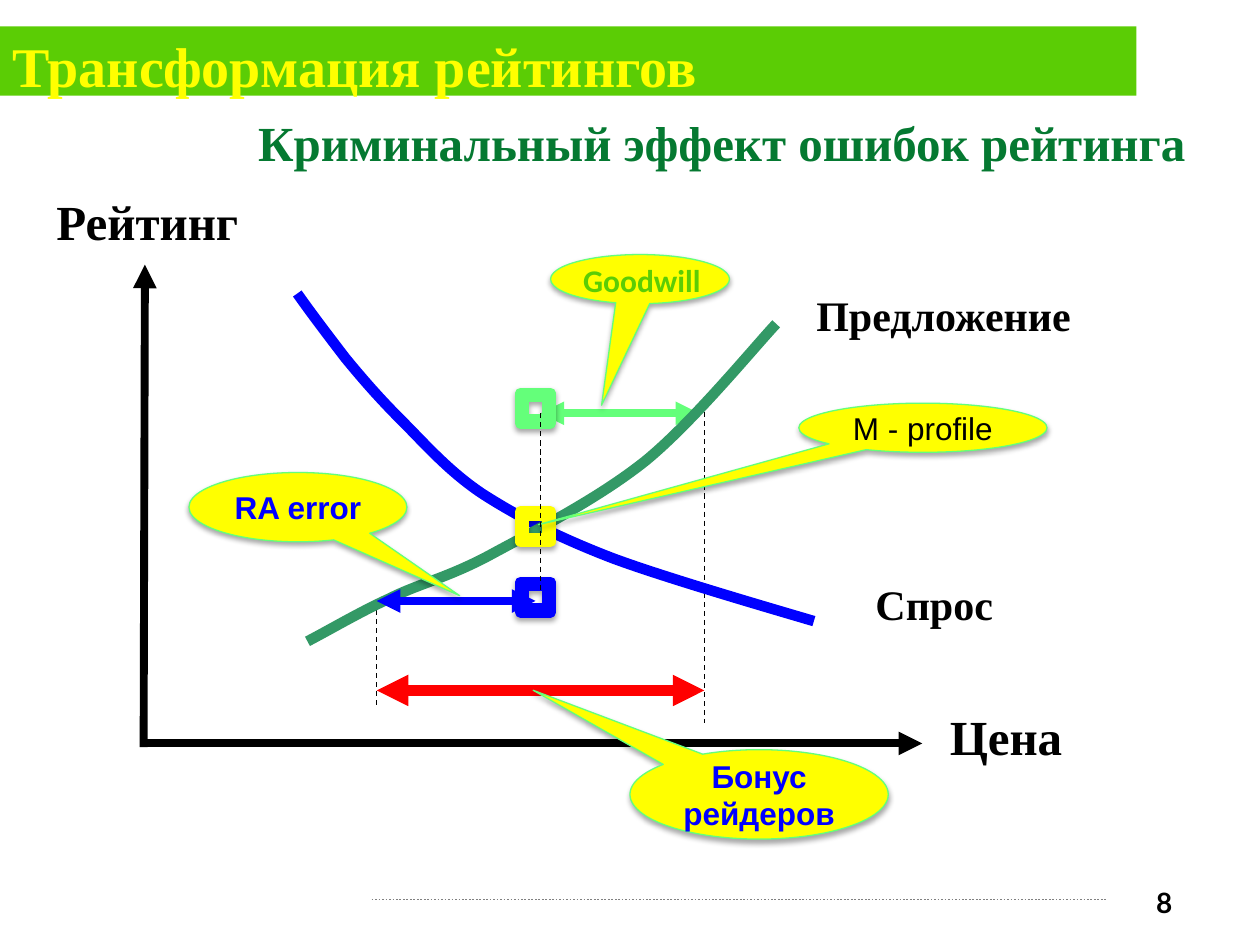
from lxml import etree
from pptx import Presentation
from pptx.dml.color import RGBColor
from pptx.enum.dml import MSO_LINE
from pptx.enum.shapes import MSO_CONNECTOR, MSO_SHAPE
from pptx.enum.text import MSO_ANCHOR, PP_ALIGN
from pptx.oxml.ns import qn
from pptx.util import Inches, Pt

STRAIGHT = MSO_CONNECTOR.STRAIGHT
RECTANGLE, FRAME, CALLOUT = MSO_SHAPE.RECTANGLE, MSO_SHAPE.FRAME, MSO_SHAPE.OVAL_CALLOUT
DASH, DOTS = MSO_LINE.DASH, MSO_LINE.ROUND_DOT
LEFT, CENTER = PP_ALIGN.LEFT, PP_ALIGN.CENTER
TOP, MIDDLE = MSO_ANCHOR.TOP, MSO_ANCHOR.MIDDLE

BLACK = RGBColor(0x00, 0x00, 0x00)
GRAY = RGBColor(0x80, 0x80, 0x80)
RED = RGBColor(0xFF, 0x00, 0x00)
BLUE = RGBColor(0x00, 0x00, 0xFF)
YELLOW = RGBColor(0xFF, 0xFF, 0x00)
BAR_GREEN = RGBColor(0x5B, 0xCD, 0x05)
MINT = RGBColor(0x64, 0xFF, 0x7A)
LIME = RGBColor(0x45, 0xFF, 0x2C)
SUPPLY_GREEN = RGBColor(0x33, 0x99, 0x66)
HEADING_GREEN = RGBColor(0x05, 0x79, 0x31)

SERIF = "Times New Roman"
ERROR_X, BALANCE_X, SUPPLY_X = 2.99, 4.29, 5.59
GOODWILL_Y, ERROR_Y, BONUS_Y = 3.28, 4.77, 5.48
FRAME_LEFT, FRAME_SIZE = 4.13, 0.24

BACK_LINES = [
    ((2.95, 7.14), (8.78, 7.14), GRAY, 1, DOTS, ()),
    ((1.14, 5.93), (1.15, 2.1), BLACK, 4.5, None, ("tailEnd",)),
    ((1.15, 5.9), (7.32, 5.9), BLACK, 4.5, None, ("tailEnd",)),
    ((ERROR_X, BONUS_Y), (SUPPLY_X, BONUS_Y), RED, 6, None, ("headEnd", "tailEnd")),
    ((BALANCE_X, GOODWILL_Y), (5.55, GOODWILL_Y), MINT, 4.5, None, ("headEnd", "tailEnd")),
    ((ERROR_X, ERROR_Y), (ERROR_X, 5.62), BLACK, 0.75, DASH, ()),
    ((SUPPLY_X, 3.2), (SUPPLY_X, 5.74), BLACK, 0.75, DASH, ()),
]
ERROR_ARROW = ((ERROR_X, ERROR_Y), (4.25, ERROR_Y), BLUE, 4.5, None, ("headEnd", "tailEnd"))
BALANCE_LINE = ((BALANCE_X, GOODWILL_Y), (BALANCE_X, 4.69), BLACK, 0.75, DASH, ())

CURVES = [
    (BLUE, [(2.36, 2.33), (2.48, 2.5), (2.61, 2.67), (2.74, 2.84), (2.88, 3.01), (3.01, 3.16),
            (3.19, 3.34), (3.37, 3.52), (3.56, 3.74), (3.83, 3.92), (4.11, 4.1), (4.42, 4.26),
            (4.86, 4.43), (5.29, 4.59), (6.19, 4.85), (6.46, 4.93)]),
    (SUPPLY_GREEN, [(2.44, 5.09), (2.65, 4.98), (2.85, 4.86), (3.09, 4.75), (3.33, 4.63),
                    (3.54, 4.59), (3.88, 4.41), (4.21, 4.23), (4.73, 3.97), (5.12, 3.66),
                    (5.5, 3.35), (5.99, 2.75), (6.16, 2.57)]),
]
FRAMES = [(3.12, LIME, MINT), (4.62, LIME, BLUE), (4.06, YELLOW, YELLOW)]

CALLOUTS = [
    ((4.37, 2.02, 1.42, 0.39), (-0.215, 2.565), "", BLUE, True),
    ((1.5, 3.75, 1.73, 0.55), (0.742, 1.278), "RA error", BLUE, True),
    ((5, 5.95, 2.05, 0.71), (-0.875, -1.165), "Бонус рейдеров", BLUE, True),
    ((6.34, 3.2, 1.97, 0.39), (-1.549, 1.971), "M - profile", BLACK, False),
]
LABELS = [
    ((6.85, 4.54, 1.57, 0.51), "Спрос", SERIF, 24, BLACK, LEFT, TOP),
    ((6.38, 2.25, 2.25, 0.51), "Предложение", SERIF, 24, BLACK, LEFT, TOP),
    ((7.44, 5.56, 1.56, 0.57), "Цена", SERIF, 28, BLACK, LEFT, TOP),
    ((0.35, 1.47, 2.16, 0.57), "Рейтинг", SERIF, 28, BLACK, LEFT, TOP),
    ((4.53, 2.02, 1.14, 0.4), "Goodwill", "Calibri", 18, BAR_GREEN, LEFT, TOP),
    ((1.95, 0.84, 8.05, 0.47), "Криминальный эффект ошибок рейтинга",
     SERIF, 28, HEADING_GREEN, LEFT, TOP),
    ((0, 0.28, 8.05, 0.47), "Трансформация рейтингов", SERIF, 32, YELLOW, LEFT, MIDDLE),
    ((8.86, 6.98, 0.76, 0.28), "8", "Lato", 16, BLACK, CENTER, TOP),
]


def write(shape, text, color, align, anchor, **formats):
    shape.text_frame.vertical_anchor = anchor
    paragraph = shape.text_frame.paragraphs[0]
    paragraph.alignment = align
    run = paragraph.add_run()
    run.text = text
    run.font.color.rgb = color
    for name, value in formats.items():
        setattr(run.font, name, value)


def add_line(slide, start, end, color, width, dash, arrowheads):
    connector = slide.shapes.add_connector(STRAIGHT, *map(Inches, start + end))
    connector.line.color.rgb = color
    connector.line.width = Pt(width)
    if dash:
        connector.line.dash_style = dash
    for arrowhead in arrowheads:
        etree.SubElement(connector.line._get_or_add_ln(), qn("a:" + arrowhead), type="triangle")
    etree.SubElement(connector._element.spPr, qn("a:effectLst"))


def add_curve(slide, color, points):
    start, *targets = [(Inches(x), Inches(y)) for x, y in points]
    builder = slide.shapes.build_freeform(*start)
    builder.add_line_segments(targets, close=False)
    shape = builder.convert_to_shape()
    shape.shadow.inherit = False
    shape.fill.background()
    shape.line.color.rgb = color
    shape.line.width = Pt(6)
    outline = shape._element.spPr.find(".//" + qn("a:path"))
    segments = outline.findall(qn("a:lnTo"))
    for first in range(0, len(segments), 3):
        bezier = etree.SubElement(outline, qn("a:cubicBezTo"))
        for segment in segments[first:first + 3]:
            bezier.append(segment[0])
            outline.remove(segment)


def add_shape(slide, kind, box, fill, line=None, width=0.75):
    shape = slide.shapes.add_shape(kind, *map(Inches, box))
    shape.shadow.inherit = False
    shape.fill.solid()
    shape.fill.fore_color.rgb = fill
    if line is None:
        shape.line.fill.background()
        return shape
    shape.line.color.rgb = line
    shape.line.width = Pt(width)
    effects = shape._element.spPr.find(qn("a:effectLst"))
    shadow = etree.SubElement(effects, qn("a:outerShdw"), blurRad=str(Pt(3.1)),
                              dist=str(Pt(1.8)), dir="5400000", rotWithShape="0")
    color = etree.SubElement(shadow, qn("a:srgbClr"), val=str(BLACK))
    etree.SubElement(color, qn("a:alpha"), val="35000")
    return shape


def add_callout(slide, box, tip, text, color, bold):
    shape = add_shape(slide, CALLOUT, box, YELLOW, MINT)
    for index, value in enumerate(tip):
        shape.adjustments[index] = value
    if text:
        shape.text_frame.word_wrap = True
        shape.text_frame.margin_left = shape.text_frame.margin_right = Inches(0.05)
        write(shape, text, color, CENTER, MIDDLE, name="Arial", size=Pt(18), bold=bold)


def add_label(slide, box, text, font, size, color, align, anchor):
    shape = slide.shapes.add_textbox(*map(Inches, box))
    shape.text_frame.word_wrap = text != "Goodwill"
    write(shape, text, color, align, anchor, name=font, size=Pt(size), bold=True)


def main():
    presentation = Presentation()
    presentation.slide_width, presentation.slide_height = Inches(10), Inches(7.5)
    slide = presentation.slides.add_slide(presentation.slide_layouts[6])
    add_shape(slide, RECTANGLE, (0, 0.21, 9.02, 0.55), BAR_GREEN)
    for line in BACK_LINES:
        add_line(slide, *line)
    for curve in CURVES:
        add_curve(slide, *curve)
    for top, fill, line in FRAMES:
        add_shape(slide, FRAME, (FRAME_LEFT, top, FRAME_SIZE, FRAME_SIZE), fill, line, 6)
    add_line(slide, *ERROR_ARROW)
    for callout in CALLOUTS:
        add_callout(slide, *callout)
    add_line(slide, *BALANCE_LINE)
    for label in LABELS:
        add_label(slide, *label)
    presentation.save("out.pptx")


if __name__ == "__main__":
    main()
